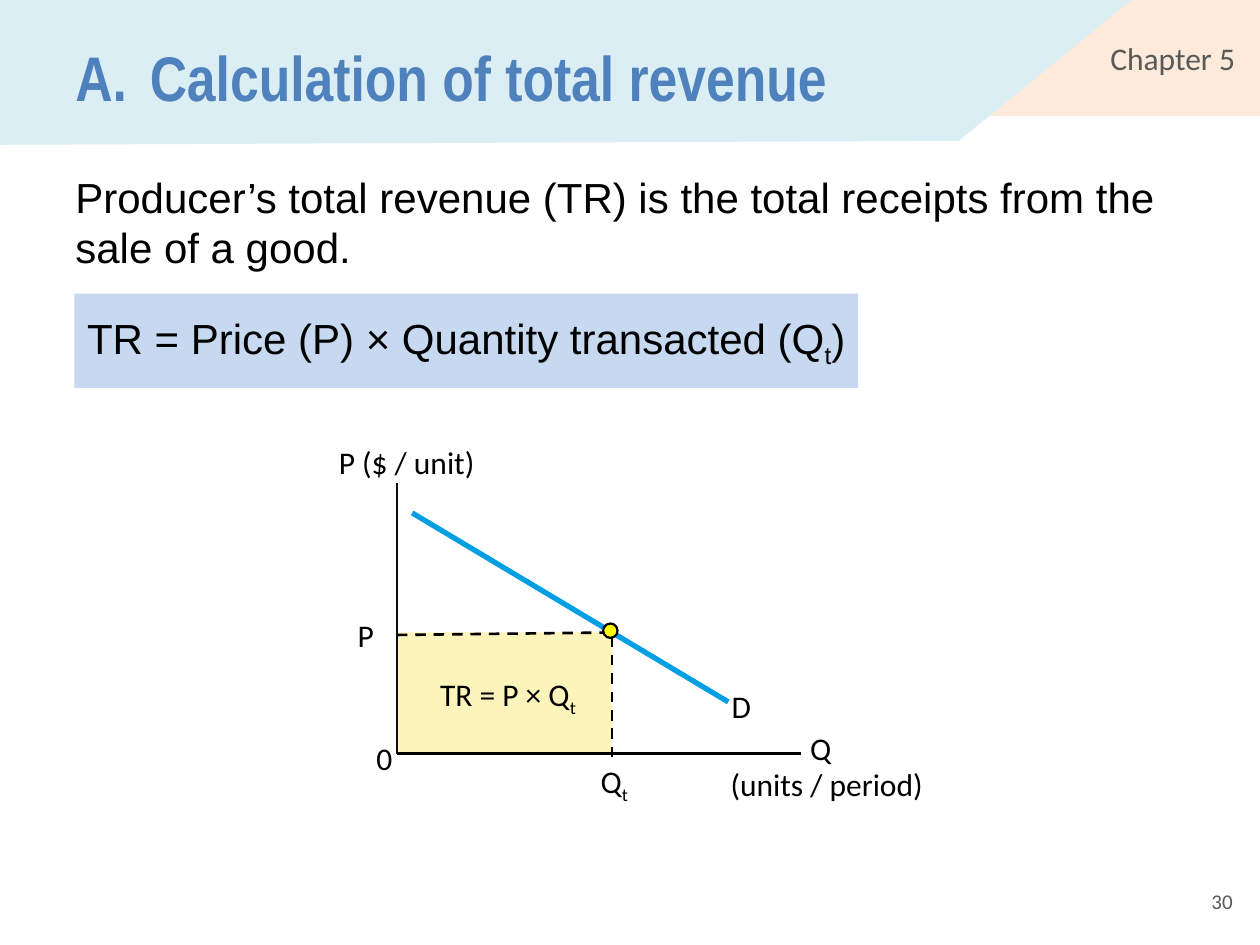
from dataclasses import dataclass

from lxml import etree
from pptx import Presentation
from pptx import util as u
from pptx.dml.color import RGBColor
from pptx.enum import dml, shapes, text
from pptx.oxml.ns import qn

LEFT, MID, RIGHT = text.PP_ALIGN.LEFT, text.PP_ALIGN.CENTER, text.PP_ALIGN.RIGHT


@dataclass(frozen=True)
class Theme:
    # Fonts
    head: str = "Arial Narrow"
    body: str = "Arial"
    label: str = "Calibri"
    # Type sizes
    title: int = 36
    main: int = 24
    small: int = 18
    tiny: int = 12
    # Colours
    ink: str = "000000"
    gray: str = "595959"
    blue: str = "4F81BD"
    peach: str = "FDEADA"
    aqua: str = "DBEEF4"
    sky: str = "C6D9F1"
    cream: str = "FDF4BB"
    curve: str = "009FE3"
    axis: str = "0D0D0D"
    dot: str = "FFFF00"


class Deck:
    def __init__(self, theme):
        self.theme = theme
        self.prs = Presentation()
        self.prs.slide_width, self.prs.slide_height = u.Cm(25.4), u.Cm(19.05)
        self.slide = self.prs.slides.add_slide(self.prs.slide_layouts[6])
        self.items = self.slide.shapes

    def paint(self, item, fill, line=None, width=1.25):
        item.shadow.inherit = False
        item.fill.solid()
        item.fill.fore_color.rgb = RGBColor.from_string(fill)
        if line:
            item.line.color.rgb = RGBColor.from_string(line)
            item.line.width = u.Pt(width)
        else:
            item.line.fill.background()
        return item

    def shape(self, kind, box, fill, line=None):
        item = self.items.add_shape(kind, *map(u.Cm, box))
        return self.paint(item, fill, line)

    def rect(self, box, fill):
        return self.shape(shapes.MSO_SHAPE.RECTANGLE, box, fill)

    def outline(self, points, fill):
        first, *rest = [(u.Cm(x), u.Cm(y)) for x, y in points]
        pen = self.items.build_freeform(*first)
        pen.add_line_segments(rest, close=True)
        return self.paint(pen.convert_to_shape(), fill)

    def line(self, start, end, color, width=1.5, dash=False):
        link = self.items.add_connector(
            shapes.MSO_CONNECTOR.STRAIGHT, *map(u.Cm, start + end))
        link.line.color.rgb = RGBColor.from_string(color)
        link.line.width = u.Pt(width)
        if dash:
            link.line.dash_style = dml.MSO_LINE.DASH
        etree.SubElement(link._element.spPr, qn("a:effectLst"))

    def words(self, item, runs, size, font, color=None, align=LEFT,
              anchor=text.MSO_ANCHOR.MIDDLE, bold=False, wrap=True):
        """Fill a shape with runs; every second run is a subscript."""
        frame = item.text_frame
        frame.word_wrap = wrap
        frame.vertical_anchor = anchor
        para = frame.paragraphs[0]
        para.alignment = align
        for i, part in enumerate(runs):
            run = para.add_run()
            run.text = part
            run.font.name, run.font.size, run.font.bold = font, u.Pt(size), bold
            run.font.color.rgb = RGBColor.from_string(color or self.theme.ink)
            if i % 2:
                run._r.get_or_add_rPr().set("baseline", "-25000")
        return para

    def text(self, box, runs, size, font, **style):
        item = self.items.add_textbox(*map(u.Cm, box))
        return self.words(item, runs, size, font, **style)

    def label(self, x, y, wide, *runs, align=LEFT):
        self.text((x, y, wide, 1.02), runs, self.theme.small, self.theme.label,
                  align=align, anchor=text.MSO_ANCHOR.TOP)


def main():
    t = Theme()
    d = Deck(t)

    # Header band and chapter tag
    tag = d.rect((18.69, 0, 6.71, 2.34), t.peach)
    tag.text_frame.margin_right = u.Cm(0.5)
    d.words(tag, ["Chapter 5"], t.small, t.label, color=t.gray, align=RIGHT)
    d.outline([(0, 0), (22.81, 0), (19.33, 2.84), (0, 2.92)], t.aqua)

    # Slide number
    d.text((19.18, 17.65, 5.92, 1.02), ["30"], t.tiny, t.label,
           color=t.gray, align=RIGHT)

    # Title with a hanging letter
    title = d.text((1.27, 0.53, 18.03, 2.01), ["A.\tCalculation of total revenue"],
                   t.title, t.head, color=t.blue, bold=True)
    props = title._p.get_or_add_pPr()
    props.set("marL", str(u.Cm(1.5)))
    props.set("indent", str(-u.Cm(1.5)))

    # Definition and formula
    d.text((1.27, 3.33, 22.86, 2.31),
           ["Producer’s total revenue (TR) is the total receipts from the sale of a good."],
           t.main, t.body, anchor=text.MSO_ANCHOR.TOP)
    rule = d.rect((1.5, 5.92, 15.8, 1.9), t.sky)
    d.words(rule, ["TR = Price (P) × Quantity transacted (Q", "t", ")"],
            t.main, t.body, align=MID, wrap=False)

    # Revenue area, demand curve and axes
    left, base = 8, 15.19
    price, sold = 12.75, 12.34
    d.rect((left, price, sold - left, base - price), t.cream)
    d.line((8.31, 10.34), (14.68, 14.15), t.curve, 3)
    d.line((left, 9.73), (left, base), t.axis)
    d.line((left, base), (16.15, base), t.ink)

    # Guides to the point sold
    d.line((left, price + 0.05), (sold, price), t.ink, dash=True)
    d.line((sold, price + 0.08), (sold, base + 0.08), t.ink, dash=True)
    d.shape(shapes.MSO_SHAPE.OVAL, (12.16, 12.57, 0.29, 0.29), t.dot, t.ink)

    # Graph labels
    d.label(7.34, 14.78, 1.47, "0")
    d.label(16.08, 14.58, 1.24, "Q")
    d.label(6.58, 8.81, 3.53, "P ($ / unit)")
    d.label(6.96, 12.29, 1.55, "P")
    d.label(14.5, 13.72, 1.24, "D")
    d.label(11.86, 15.24, 1.55, "Q", "t")
    d.label(14.48, 15.29, 4.57, "(units / period)")
    d.label(8.32, 13.49, 3.84, "TR = P × Q", "t", align=MID)

    d.prs.save("out.pptx")


if __name__ == "__main__":
    main()
